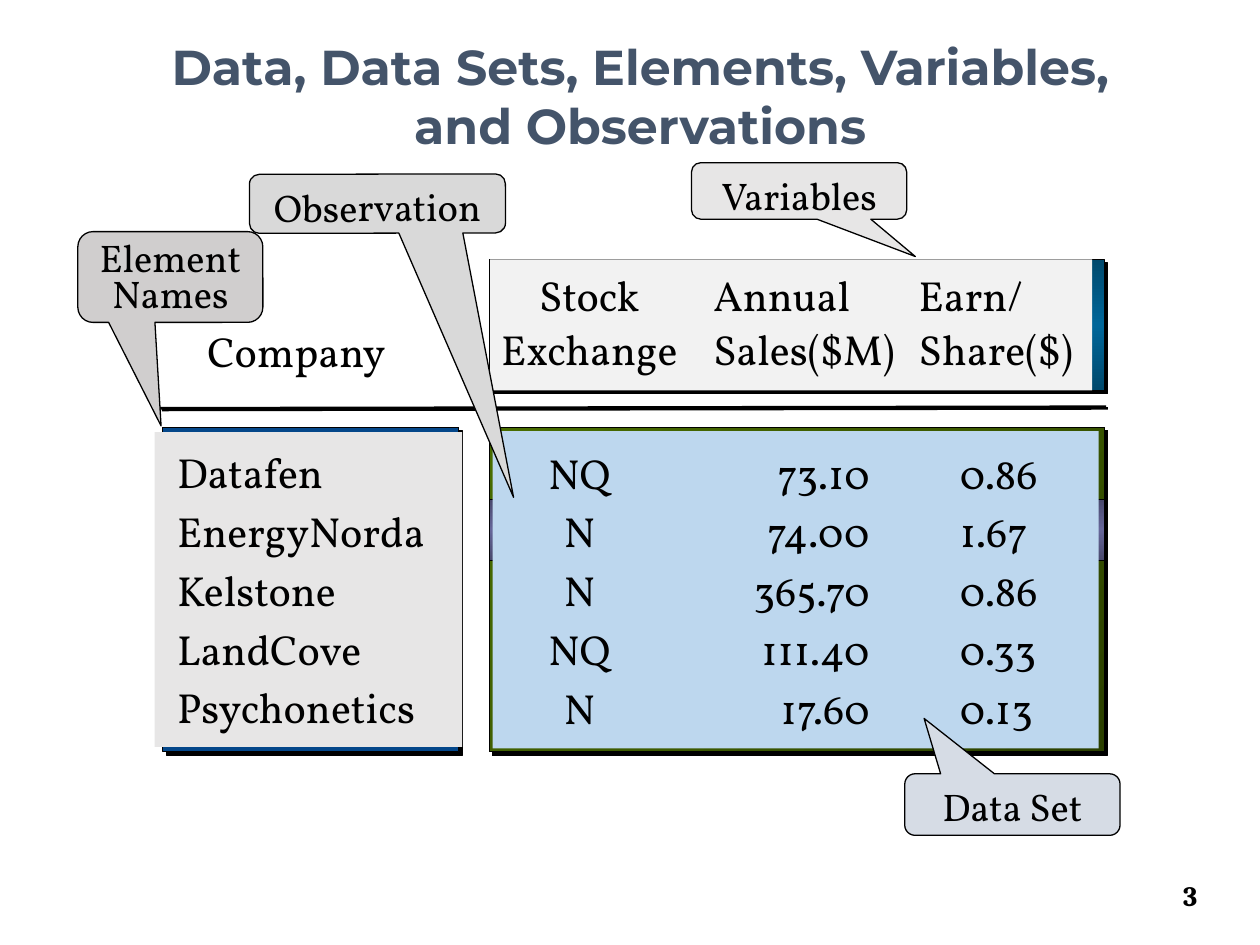
from dataclasses import dataclass
from copy import deepcopy

from lxml import etree
from pptx import Presentation
from pptx.dml.color import RGBColor
from pptx.enum.shapes import MSO_CONNECTOR, MSO_SHAPE
from pptx.enum.text import MSO_ANCHOR, MSO_AUTO_SIZE, PP_ALIGN
from pptx.oxml.ns import qn
from pptx.util import Cm, Pt

RECT = MSO_SHAPE.RECTANGLE
CALLOUT = MSO_SHAPE.ROUNDED_RECTANGULAR_CALLOUT
STRAIGHT = MSO_CONNECTOR.STRAIGHT
TOP, MIDDLE = MSO_ANCHOR.TOP, MSO_ANCHOR.MIDDLE
LEFT, CENTER = PP_ALIGN.LEFT, PP_ALIGN.CENTER
NO_FIT = MSO_AUTO_SIZE.NONE


@dataclass(frozen=True)
class Theme:
    title_font: str = "Montserrat"
    body_font: str = "Vollkorn"
    number_font: str = "Cambria"
    title_size: int = 28
    body_size: int = 24
    callout_size: int = 22
    number_size: int = 16
    title: str = "44546A"
    ink: str = "000000"
    green: tuple = ("2B4000", "3D5B00", "486C00")
    blue: tuple = ("04478A", "0563C1", "04478A")
    teal: tuple = ("00496D", "006699", "00496D")
    purple: tuple = ("49496D", "666699", "49496D")
    header: str = "F2F2F2"
    names: str = "E7E6E6"
    data: str = "BDD7EE"
    variables: str = "E7E6E6"
    element: str = "D0CECE"
    data_set: str = "D6DCE5"
    observation: str = "D9D9D9"


theme = Theme()
prs = Presentation()
prs.slide_width, prs.slide_height = Cm(25.4), Cm(19.05)
slide = prs.slides.add_slide(prs.slide_layouts[5])


def add_block(kind, box, colors, line_width=0, angle=270, shadow=0):
    block = slide.shapes.add_shape(kind, *map(Cm, box))
    if isinstance(colors, str):
        block.fill.solid()
        block.fill.fore_color.rgb = RGBColor.from_string(colors)
    else:
        block.fill.gradient()
        block.fill.gradient_angle = angle
        stops = block._element.spPr.find(".//" + qn("a:gsLst"))
        stops.insert(1, deepcopy(stops[0]))
        for stop, color, position in zip(block.fill.gradient_stops, colors, (0, 0.5, 1)):
            stop.color.rgb = RGBColor.from_string(color)
            stop.position = position
    if line_width:
        block.line.color.rgb = RGBColor.from_string(theme.ink)
        block.line.width = Pt(line_width)
    else:
        block.line.fill.background()
    block.shadow.inherit = False
    if shadow:
        effects = block._element.spPr.find(qn("a:effectLst"))
        cast = etree.SubElement(effects, qn("a:outerShdw"), dist=str(Pt(shadow)), dir="2700000")
        etree.SubElement(cast, qn("a:srgbClr"), val=theme.ink)
    return block


def write(shape, lines, size=theme.body_size, font=theme.body_font, color=theme.ink, bold=False,
          align=LEFT, anchor=MIDDLE, insets=(0, 0), spacing=1.0, before=0, tabs=()):
    frame = shape.text_frame
    frame.text = "\n".join(lines)
    side, edge = map(Cm, insets)
    settings = {"auto_size": NO_FIT, "word_wrap": True, "vertical_anchor": anchor,
                "margin_left": side, "margin_right": side, "margin_top": edge, "margin_bottom": edge}
    for name, value in settings.items():
        setattr(frame, name, value)
    for index, paragraph in enumerate(frame.paragraphs):
        if tabs:
            stops = etree.SubElement(paragraph._p.get_or_add_pPr(), qn("a:tabLst"))
            for position, kind in tabs:
                etree.SubElement(stops, qn("a:tab"), pos=str(Cm(position)), algn=kind)
        paragraph.alignment = align
        paragraph.line_spacing = spacing
        paragraph.space_before = Pt(before if index else 0)
        for run in paragraph.runs:
            run.font.name, run.font.size, run.font.bold = font, Pt(size), bold
            run.font.color.rgb = RGBColor.from_string(color)


heading = slide.shapes.title
heading.left, heading.top, heading.width, heading.height = map(Cm, (1.45, 0.79, 22.91, 2.26))
write(heading, ["Data, Data Sets, Elements, Variables,", "and Observations"], theme.title_size,
      theme.title_font, theme.title, True, CENTER, insets=(0.25, 0.13))

page_number = slide.shapes.add_textbox(*map(Cm, (23.6, 17.58, 1.37, 0.94)))
write(page_number, ["3"], theme.number_size, theme.number_font, bold=True, anchor=TOP, insets=(0.25, 0.13))

for box, colors, angle in [
    ((9.86, 8.61, 12.4, 6.55), theme.green, 135),
    ((3.28, 8.61, 5.97, 6.55), theme.blue, 270),
    ((9.86, 5.23, 12.4, 2.64), theme.teal, 270),
]:
    add_block(RECT, box, colors, 0.5, angle, 2.8)

header = add_block(RECT, (9.88, 5.23, 12.14, 2.64), theme.header)
headings = [("Stock", "Annual", "Earn/"), ("Exchange", "Sales($M)", "Share($)")]
write(header, ["\t" + "\t".join(line) for line in headings], spacing=0.9, before=4.8,
      tabs=[(2, "ctr"), (4.5, "l"), (8.64, "l")])

rule = slide.shapes.add_connector(STRAIGHT, Cm(3.23), Cm(8.23), Cm(22.3), Cm(8.2))
rule.line.color.rgb = RGBColor.from_string(theme.ink)
rule.line.width = Pt(1.5)
rule_effects = etree.SubElement(rule._element.spPr, qn("a:effectLst"))
rule_shadow = etree.SubElement(rule_effects, qn("a:outerShdw"), dist=str(Pt(1.4)), dir="2700000")
etree.SubElement(rule_shadow, qn("a:srgbClr"), val=theme.ink)

company = slide.shapes.add_textbox(*map(Cm, (3.56, 6.63, 4.83, 0.89)))
write(company, ["Company"], align=CENTER)

records = [
    ("Datafen", "NQ", "73.10", "0.86"),
    ("EnergyNorda", "N", "74.00", "1.67"),
    ("Kelstone", "N", "365.70", "0.86"),
    ("LandCove", "NQ", "111.40", "0.33"),
    ("Psychonetics", "N", "17.60", "0.13"),
]
names = add_block(RECT, (3.12, 8.71, 6.2, 6.35), theme.names)
write(names, [record[0] for record in records], insets=(0.45, 0), before=4.8)

add_block(RECT, (9.86, 10.06, 12.4, 1.24), theme.purple, 0.5)
data = add_block(RECT, (9.93, 8.69, 12.22, 6.4), theme.data)
write(data, ["\t" + "\t".join(record[1:]) for record in records], before=4.8,
      tabs=[(1.75, "ctr"), (7.6, "r"), (9.42, "l")])

for lines, box, color, tip, spacing, rotation in [
    (["Variables"], (13.94, 3.28, 4.34, 1.14), theme.variables, (0.54, 1.16), 1.0, 0),
    (["Element", "Names"], (1.57, 4.67, 3.73, 1.83), theme.element, (-0.05, 1.64), 0.8, 0),
    (["Data Set"], (18.24, 15.6, 4.34, 1.24), theme.data_set, (-0.41, -1.4), 1.0, 0),
    (["Observation"], (5.03, 3.51, 5.16, 1.19), theme.observation, (0.53, 4.98), 1.0, 359.9),
]:
    callout = add_block(CALLOUT, box, color, 0.75)
    callout.adjustments[0], callout.adjustments[1] = tip
    callout.rotation = rotation
    write(callout, lines, theme.callout_size, align=CENTER, anchor=TOP, insets=(0, 0.13), spacing=spacing)

prs.save("out.pptx")
